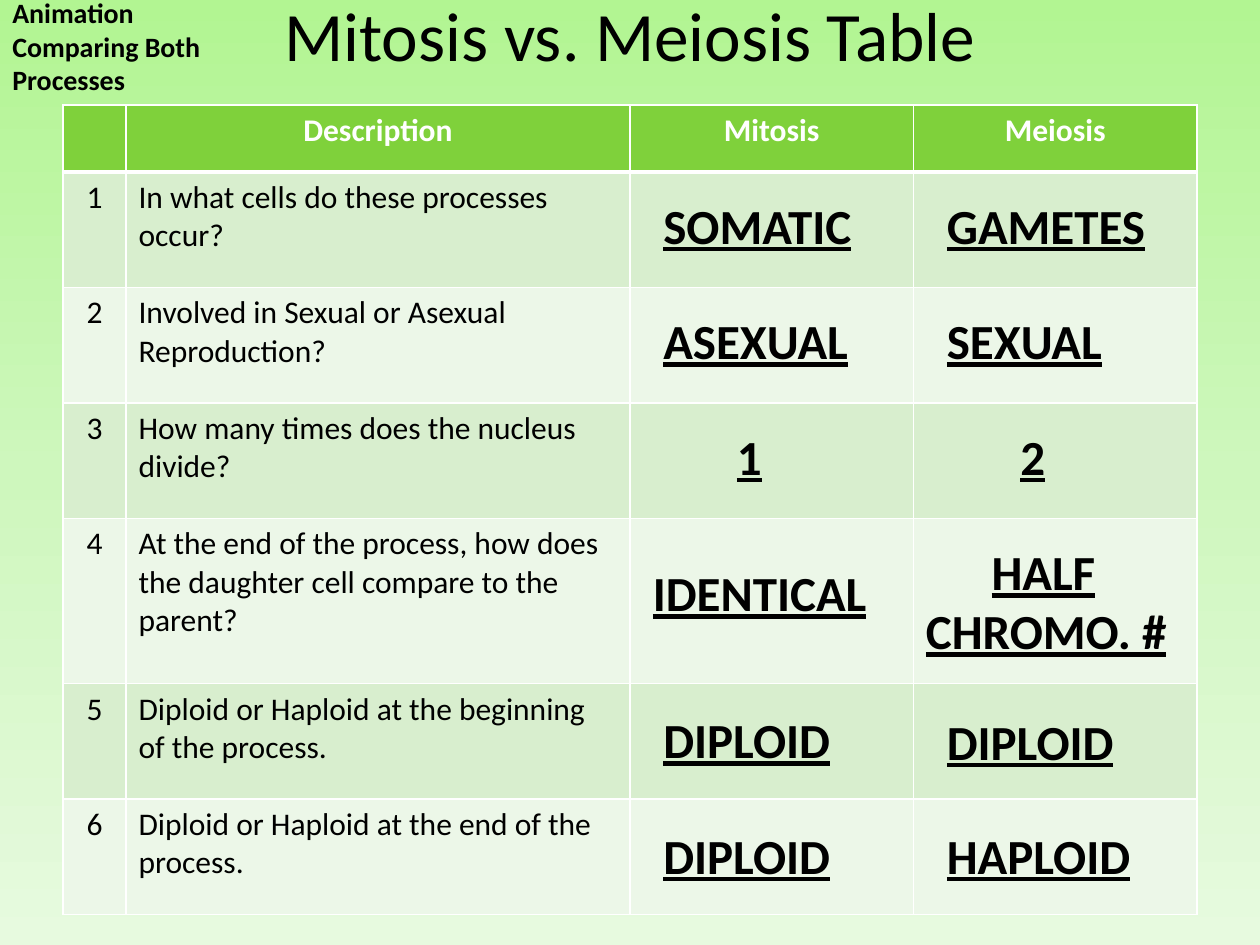
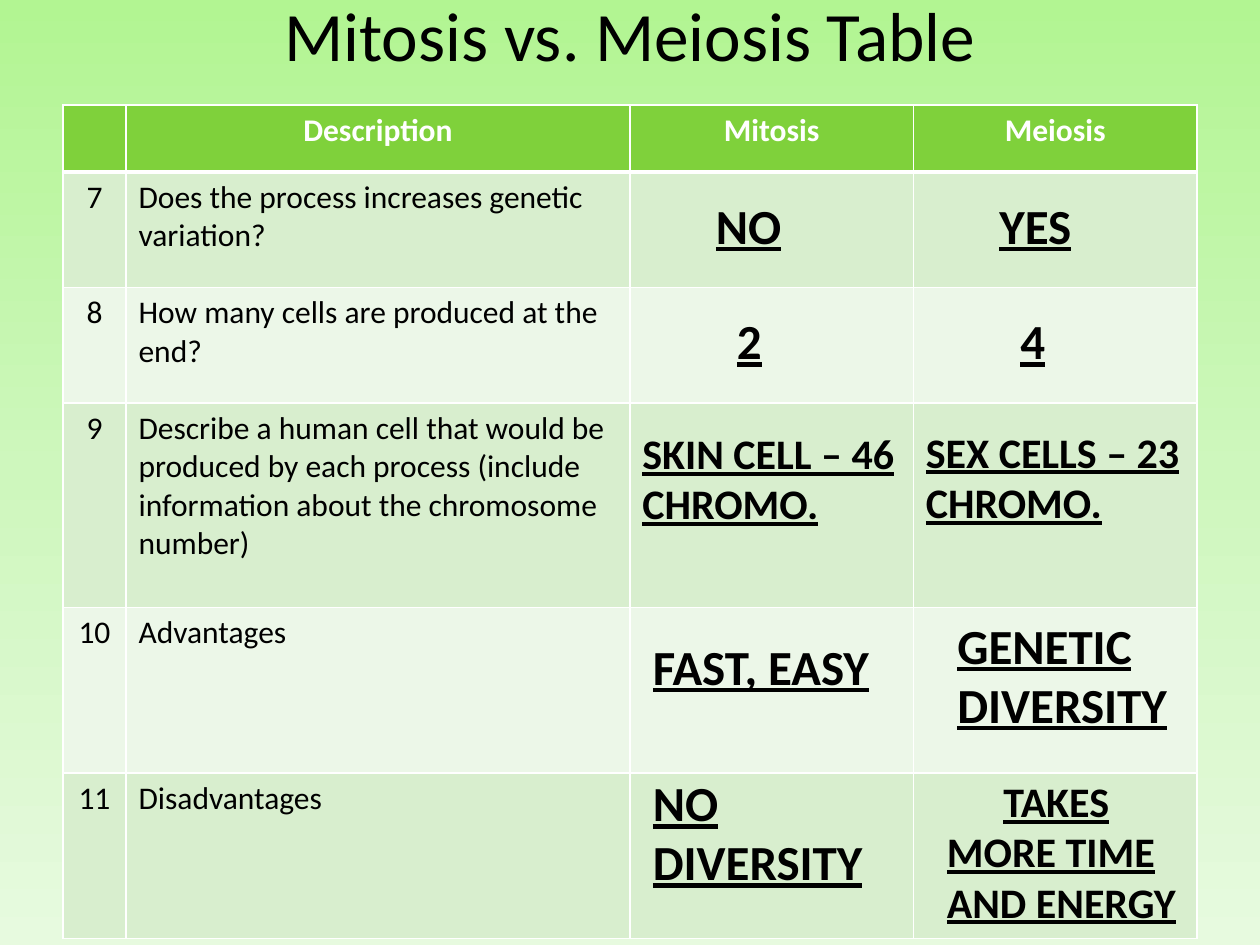
"""Build two slides that compare mitosis and meiosis in a table with answers laid over it."""
import dataclasses
import pptx
import pptx.util
import pptx.dml.color
import pptx.enum.text
import pptx.oxml
import pptx.oxml.ns


@dataclasses.dataclass(frozen=True)
class Theme:
    face: str = "Calibri"
    ink: str = "000000"
    white: str = "FFFFFF"
    head: str = "7FD13B"
    bands: tuple = ("ECF7E8", "D8EECE")
    stops: tuple = ((0, "B2F592"), (50, "CEF7BD"), (100, "E7FADF"))
    title: float = 39.6
    body: int = 18
    large: int = 28
    small: int = 24
    label: int = 16


theme = Theme()
PX = 9525
ALIGN = pptx.enum.text.PP_ALIGN
FIT = pptx.enum.text.MSO_AUTO_SIZE
RGB = pptx.dml.color.RGBColor.from_string
NS = pptx.oxml.ns.nsdecls("a")


def style(frame, size, color=theme.ink, bold=False, line=False, align=ALIGN.LEFT):
    for para in frame.paragraphs:
        para.alignment = align
        for run in para.runs:
            font = run.font
            font.name, font.size = theme.face, pptx.util.Pt(size)
            font.bold, font.underline = bold, line
            font.color.rgb = RGB(color)


def note(slide, text, left, top, width, lines, size, line=True, indent=0):
    high = round(lines * size * 1.6 + 10)
    box = slide.shapes.add_textbox(left * PX, top * PX, width * PX, high * PX)
    frame = box.text_frame
    frame.word_wrap = True
    frame.auto_size = FIT.SHAPE_TO_FIT_TEXT
    frame.text = text
    style(frame, size, bold=True, line=line)
    if indent:
        props = frame.paragraphs[0]._p.get_or_add_pPr()
        props.set("marL", "0")
        props.set("indent", str(indent * PX))


big, small = theme.large, theme.small
heads = ("", "Description", "Mitosis", "Meiosis")
cols = (48, 384, 216, 216)
left, top, head = 48, 80, 51
starts = (480, 696)

# Each answer: text, shift from its column, shift from its row, width, lines, size, first-line indent
pages = (
    (1, "Animation Comparing Both Processes", (
        (88, "In what cells do these processes occur?",
         ("SOMATIC", 16, 13, 184, 1, big, 0), ("GAMETES", 16, 13, 184, 1, big, 0)),
        (88, "Involved in Sexual or Asexual Reproduction?",
         ("ASEXUAL", 16, 13, 184, 1, big, 0), ("SEXUAL", 16, 13, 184, 1, big, 0)),
        (88, "How many times does the nucleus divide?",
         ("1", 72, 13, 64, 1, big, 0), ("2", 72, 13, 64, 1, big, 0)),
        (126, "At the end of the process, how does the daughter cell compare to the parent?",
         ("IDENTICAL", 8, 29, 200, 1, big, 0), ("HALF CHROMO. #", 0, 13, 208, 2, big, 50)),
        (88, "Diploid or Haploid at the beginning of the process.",
         ("DIPLOID", 16, 15, 184, 1, big, 0), ("DIPLOID", 16, 16, 184, 1, big, 0)),
        (88, "Diploid or Haploid at the end of the process.",
         ("DIPLOID", 16, 15, 184, 1, big, 0), ("HAPLOID", 16, 15, 184, 1, big, 0)),
    )),
    (7, "", (
        (88, "Does the process increases genetic variation?",
         ("NO", 56, 13, 96, 1, big, 0), ("YES", 56, 13, 96, 1, big, 0)),
        (88, "How many cells are produced at the end?",
         ("2", 72, 13, 64, 1, big, 0), ("4", 72, 13, 64, 1, big, 0)),
        (156, "Describe a human cell that would be produced by each process "
         "(include information about the chromosome number)",
         ("SKIN CELL – 46 CHROMO.", 0, 14, 216, 2, small, 0),
         ("SEX CELLS – 23 CHROMO.", 0, 13, 216, 2, small, 0)),
        (126, "Advantages",
         ("FAST, EASY", 8, 17, 200, 1, big, 0), ("GENETIC DIVERSITY", 24, 1, 184, 2, big, 0)),
        (126, "Disadvantages",
         ("NO DIVERSITY", 8, -5, 200, 2, big, 0),
         ("TAKES MORE TIME AND ENERGY", 16, -3, 208, 3, small, 43)),
    )),
)

deck = pptx.Presentation()
deck.slide_width, deck.slide_height = 960 * PX, 720 * PX
master = deck.slide_master
fill = master.background.fill
fill.gradient()
fill.gradient_angle = 270
stops = next(master.element.iter(pptx.oxml.ns.qn("a:gsLst")))
for stop in list(stops):
    stops.remove(stop)
for place, color in theme.stops:
    stops.append(pptx.oxml.parse_xml(
        f'<a:gs {NS} pos="{place * 1000}"><a:srgbClr val="{color}"/></a:gs>'))

for first, label, rows in pages:
    slide = deck.slides.add_slide(deck.slide_layouts[5])
    title = slide.shapes.title
    title.left, title.top, title.width, title.height = 48 * PX, 0, 864 * PX, 51 * PX
    frame = title.text_frame
    frame.text = "Mitosis vs. Meiosis Table"
    frame.auto_size = FIT.NONE
    frame.vertical_anchor = pptx.enum.text.MSO_ANCHOR.MIDDLE
    style(frame, theme.title, align=ALIGN.CENTER)

    highs = [head] + [row[0] for row in rows]
    table = slide.shapes.add_table(
        len(highs), len(cols), left * PX, top * PX, sum(cols) * PX, sum(highs) * PX).table
    for col, width in zip(table.columns, cols):
        col.width = width * PX
    for num, high in enumerate(highs):
        table.rows[num].height = high * PX
        texts = (str(first + num - 1), rows[num - 1][1], "", "") if num else heads
        for pos, text in enumerate(texts):
            cell = table.cell(num, pos)
            cell.text = text
            cell.fill.solid()
            cell.fill.fore_color.rgb = RGB(theme.bands[num % 2] if num else theme.head)
            style(cell.text_frame, theme.body, theme.ink if num else theme.white, not num,
                  align=ALIGN.LEFT if num and pos else ALIGN.CENTER)
            props = cell._tc.get_or_add_tcPr()
            for spot, side in enumerate("LRTB"):
                thick = 3 if (num, side) in ((0, "B"), (1, "T")) else 1
                props.insert(spot, pptx.oxml.parse_xml(
                    f'<a:ln{side} {NS} w="{thick * 12700}"><a:solidFill>'
                    f'<a:srgbClr val="{theme.white}"/></a:solidFill></a:ln{side}>'))

    base = top + head
    for high, _, *pair in rows:
        for start, (text, dx, dy, width, lines, size, indent) in zip(starts, pair):
            note(slide, text, start + dx, base + dy, width, lines, size, indent=indent)
        base += high
    if label:
        note(slide, label, 0, -8, 192, 3, theme.label, line=False)

deck.save("out.pptx")
